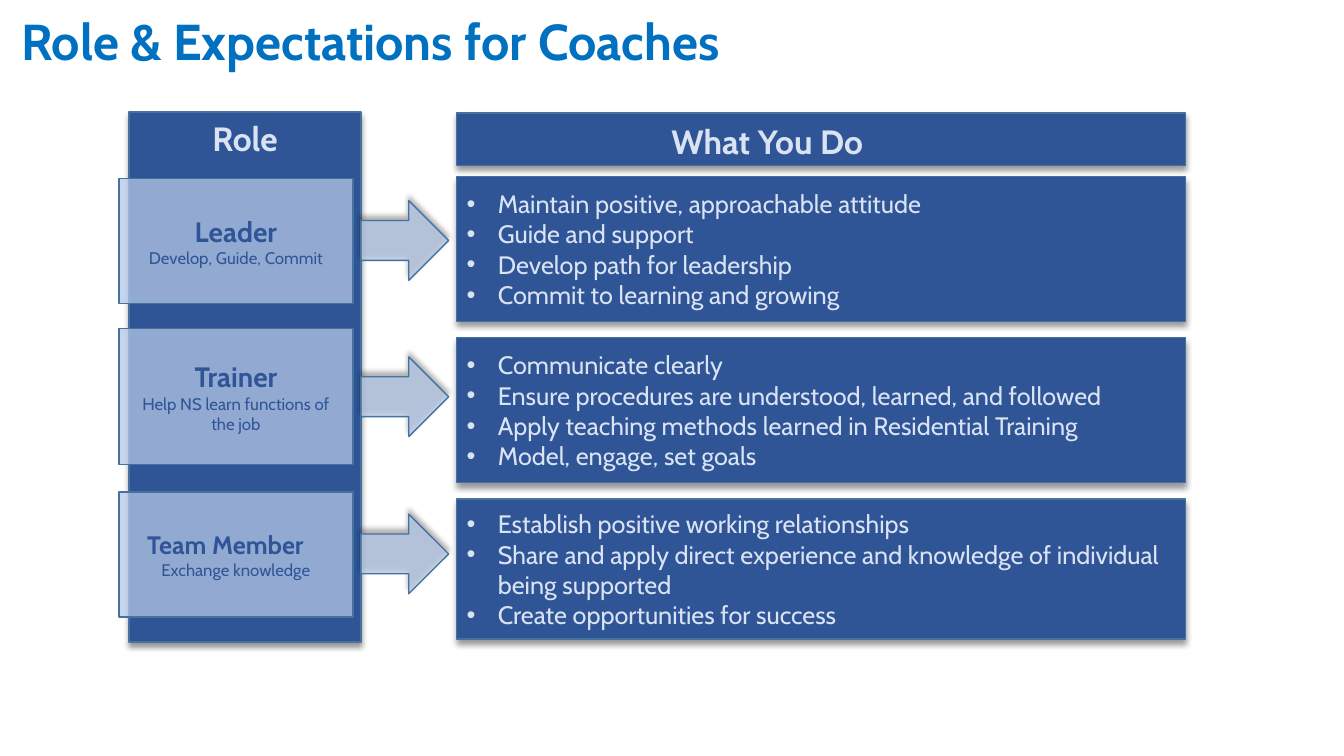
"""Build a slide on the roles of coaches and what each role does."""
from lxml.etree import SubElement
from pptx import Presentation
from pptx.dml.color import RGBColor
from pptx.enum.shapes import MSO_SHAPE as Shape
from pptx.enum.text import MSO_ANCHOR as Anchor, PP_ALIGN as Align
from pptx.oxml.ns import qn
from pptx.util import Inches, Pt

BLUE = RGBColor(0x00, 0x70, 0xC0)
NAVY = RGBColor(0x2F, 0x55, 0x97)
EDGE = RGBColor(0x43, 0x73, 0x9E)
PALE = RGBColor(0xB4, 0xC7, 0xE7)
ICE = RGBColor(0xDA, 0xE3, 0xF3)
FONT = "Cabin"

ROLES = [
    ("Leader", "Develop, Guide, Commit", 20, None,
     (1.77, 1.24), 1.99, (1.75, 1.44),
     ["Maintain positive, approachable attitude",
      "Guide and support",
      "Develop path for leadership",
      "Commit to learning and growing"]),
    ("Trainer", "Help NS learn functions of the job", 20, None,
     (3.26, 1.35), 3.54, (3.35, 1.44),
     ["Communicate clearly",
      "Ensure procedures are understood, learned, and followed",
      "Apply teaching methods learned in Residential Training",
      "Model, engage, set goals"]),
    ("Team Member", "Exchange knowledge", 18, 0.18,
     (4.88, 1.24), 5.1, (4.95, 1.39),
     ["Establish positive working relationships",
      "Share and apply direct experience and knowledge of individual "
      "being supported",
      "Create opportunities for success"]),
]


def style(para, size, color, bold=False):
    """Set the font of each run in a paragraph."""
    for run in para.runs:
        font = run.font
        font.name, font.size, font.bold = FONT, Pt(size), bold
        font.color.rgb = color


def add_box(slide, kind, box, fill, alpha=None, angle=None):
    """Add an outlined shape, clear by alpha and shadowed at angle."""
    shape = slide.shapes.add_shape(kind, *map(Inches, box))
    shape.shadow.inherit = False
    shape.fill.solid()
    shape.fill.fore_color.rgb = fill
    props = shape.element.spPr
    if alpha:
        tint = props.find(qn("a:solidFill")).find(qn("a:srgbClr"))
        SubElement(tint, qn("a:alpha"), val=str(alpha * 1000))
    shape.line.color.rgb = EDGE
    shape.line.width = Pt(1)
    if angle:
        cast = SubElement(props.find(qn("a:effectLst")), qn("a:outerShdw"),
                          blurRad=str(Pt(4)), dist=str(Pt(3)),
                          dir=str(angle * 60000), algn="t", rotWithShape="0")
        tone = SubElement(cast, qn("a:srgbClr"), val="000000")
        SubElement(tone, qn("a:alpha"), val="40000")
    frame = shape.text_frame
    frame.word_wrap = True
    frame.vertical_anchor = Anchor.MIDDLE
    return shape


def add_title(slide, box):
    """Place and format the slide title."""
    title = slide.shapes.title
    title.left, title.top, title.width, title.height = map(Inches, box)
    frame = title.text_frame
    frame.text = "Role & Expectations for Coaches"
    frame.vertical_anchor = Anchor.MIDDLE
    para = frame.paragraphs[0]
    para.alignment = Align.LEFT
    para.line_spacing = 0.9
    style(para, 36, BLUE, True)


def add_head(slide, box, text, align):
    """Add a column heading."""
    frame = slide.shapes.add_textbox(*map(Inches, box)).text_frame
    frame.word_wrap = True
    frame.text = text
    para = frame.paragraphs[0]
    para.alignment = align
    style(para, 24, ICE, True)


def add_card(slide, box, name, note, size, indent):
    """Add a role card with its name and note."""
    frame = add_box(slide, Shape.RECTANGLE, box, PALE, 75).text_frame
    frame.text = f"{name}\n{note}"
    head, sub = frame.paragraphs
    head.alignment = sub.alignment = Align.CENTER
    if indent:
        head.alignment = Align.LEFT
        head._p.get_or_add_pPr().set("marL", str(Inches(indent)))
    style(head, size, NAVY, True)
    style(sub, 12, NAVY)


def add_duties(slide, box, duties):
    """Add a panel with a bulleted list of duties."""
    frame = add_box(slide, Shape.RECTANGLE, box, NAVY, angle=90).text_frame
    frame.text = "\n".join(duties)
    for para in frame.paragraphs:
        para.alignment = Align.LEFT
        props = para._p.get_or_add_pPr()
        props.set("marL", str(Inches(0.31)))
        props.set("indent", str(-Inches(0.31)))
        SubElement(props, qn("a:buFont"), typeface="Arial")
        SubElement(props, qn("a:buChar"), char="•")
        style(para, 18, ICE)


def add_roles(slide, left, top):
    """Add the role column, the duty column and the arrows between them."""
    right = left + 3.25
    add_box(slide, Shape.RECTANGLE, (left, top, 2.3, 5.26), NAVY, angle=90)
    add_head(slide, (left + 0.16, top + 0.01, 1.98, 0.5), "Role",
             Align.CENTER)
    add_box(slide, Shape.RECTANGLE, (right, top + 0.01, 7.23, 0.52), NAVY,
            angle=90)
    add_head(slide, (right + 2.03, top + 0.04, 3.5, 0.5), "What You Do",
             Align.LEFT)
    for name, note, size, indent, card, arrow, panel, duties in ROLES:
        add_card(slide, (left - 0.1, card[0], 2.32, card[1]),
                 name, note, size, indent)
        add_box(slide, Shape.RIGHT_ARROW, (left + 2.3, arrow, 0.87, 0.79),
                PALE, 75, 270)
        add_duties(slide, (right, panel[0], 7.23, panel[1]), duties)


def main():
    """Build and save the presentation."""
    deck = Presentation()
    deck.slide_width, deck.slide_height = Inches(13.33), Inches(7.5)
    slide = deck.slides.add_slide(deck.slide_layouts[5])
    add_title(slide, (0.11, 0, 11.5, 0.87))
    add_roles(slide, 1.28, 1.11)
    deck.save("out.pptx")


if __name__ == "__main__":
    main()
